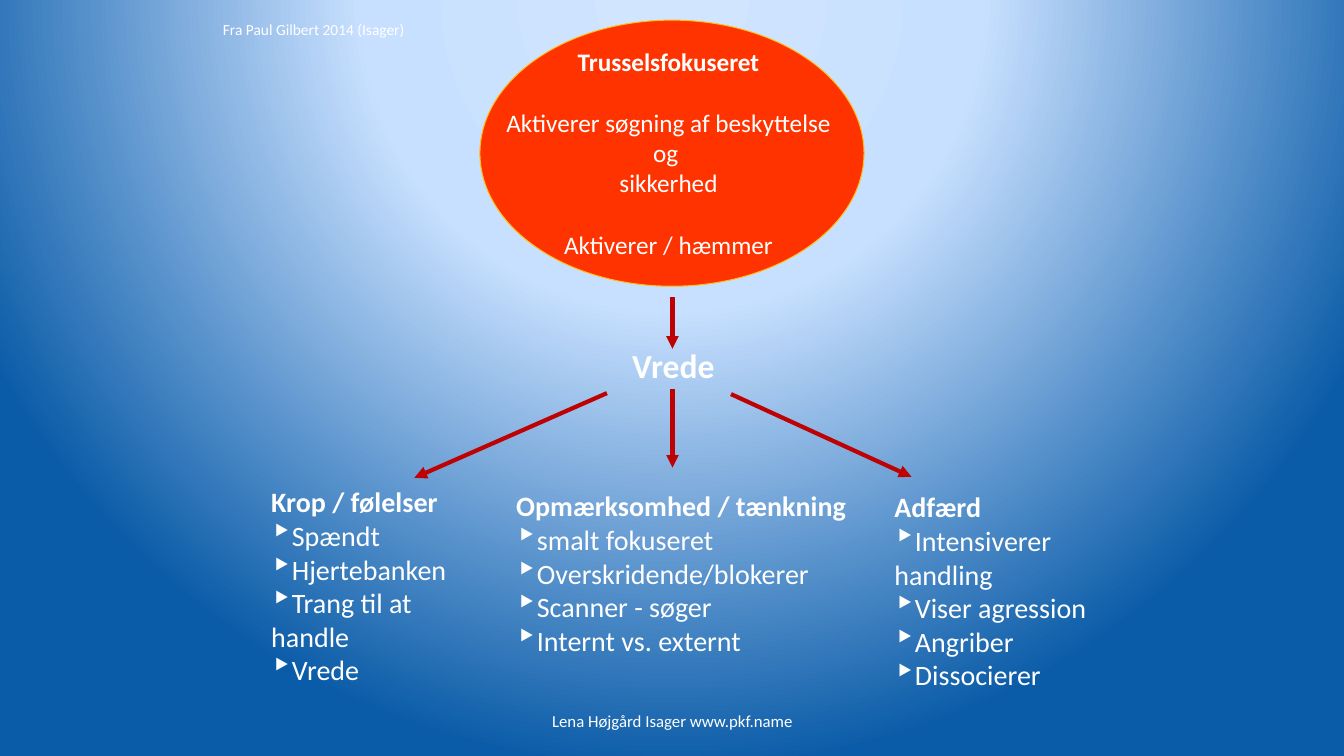
import pptx
import pptx.dml.color
import pptx.enum.shapes
import pptx.enum.text
import pptx.oxml
import pptx.oxml.ns
import pptx.util
from lxml import etree

RGBColor = pptx.dml.color.RGBColor
Align = pptx.enum.text.PP_ALIGN
Anchor = pptx.enum.text.MSO_ANCHOR
qn = pptx.oxml.ns.qn

WHITE = RGBColor(0xFF, 0xFF, 0xFF)
ORANGE_RED = RGBColor(0xFF, 0x33, 0x00)
GOLD = RGBColor(0xFB, 0xC0, 0x1E)
DARK_RED = RGBColor(0xBE, 0x02, 0x04)
BACKGROUND_STOPS = [
    (0, RGBColor(0xD1, 0xE5, 0xFF)),
    (40, RGBColor(0xC8, 0xE0, 0xFF)),
    (100, RGBColor(0x0B, 0x5C, 0xA8)),
]

PX = 9144  # EMU per px, 100 px to the inch
SLIDE_SIZE = (1333, 750)
FONT = "Calibri"
LABEL_INSETS = (0, 0, 4, 0)
THREAT_INSETS = (4, 4, 13, 4)
FOOTER_INSETS = (10, 5, 10, 5)

OVAL = (476, 20, 381, 264)
THREAT_BOX = (494, 48, 345, 207)
# text, bold, space before in points
THREAT_LINES = [
    ("Trusselsfokuseret", True, 0),
    ("Aktiverer søgning af beskyttelse og ", False, 22),
    ("sikkerhed", False, 0),
    ("Aktiverer / hæmmer", False, 22),
]
ARROWS = [
    ((725, 391), (904, 473)),
    ((667, 386), (667, 464)),
    ((602, 390), (411, 474)),
    ((667, 295), (667, 346)),
]
# place, size in points, bold, text
LABELS = [
    ((623, 342, 91, 40), 24, True, "Vrede"),
    ((217, 20, 191, 19), 11, False, "Fra Paul Gilbert 2014 (Isager)"),
]
# place, wraps, heading, items
COLUMNS = [
    ((508, 485, 338, 168), False, "Opmærksomhed / tænkning",
     ["smalt fokuseret", "Overskridende/blokerer", "Scanner - søger",
      "Internt vs. externt"]),
    ((265, 481, 210, 130), True, "Krop / følelser",
     ["Spændt", "Hjertebanken", "Trang til at handle", "Vrede"]),
    ((883, 486, 263, 168), False, "Adfærd",
     ["Intensiverer handling", "Viser agression", "Angriber",
      "Dissocierer"]),
]
FOOTER_BOX = (456, 695, 422, 40)
FOOTER = "Lena Højgård Isager www.pkf.name"


def emu(lengths):
    return [length * PX for length in lengths]


def paint_background(slide):
    slide.background.fill.solid()
    stops = "".join(
        f'<a:gs pos="{percent * 1000}"><a:srgbClr val="{color}"/></a:gs>'
        for percent, color in BACKGROUND_STOPS)
    gradient = pptx.oxml.parse_xml(
        f'<a:gradFill {pptx.oxml.ns.nsdecls("a")} rotWithShape="1">'
        f'<a:gsLst>{stops}</a:gsLst><a:path path="circle">'
        '<a:fillToRect l="50000" t="-80000" r="50000" b="180000"/>'
        '</a:path></a:gradFill>')
    solid = next(slide.element.iter(qn("a:solidFill")))
    solid.getparent().replace(solid, gradient)


def add_text_box(shapes, place, insets, wrap, anchor=Anchor.TOP):
    frame = shapes.add_textbox(*emu(place)).text_frame
    frame.word_wrap = wrap
    frame.vertical_anchor = anchor
    (frame.margin_left, frame.margin_top,
     frame.margin_right, frame.margin_bottom) = emu(insets)
    return frame


def add_line(frame, text, size, bold=False, align=Align.LEFT,
             indent=0, bullet=False):
    """Fill the frame's empty first paragraph, or append a new one."""
    first = frame.paragraphs[0]
    para = frame.add_paragraph() if first.runs else first
    para.alignment = align
    properties = para._p.get_or_add_pPr()
    properties.set("marL", str(indent * PX))
    properties.set("indent", "0")
    if bullet:
        etree.SubElement(properties, qn("a:buSzPct")).set("val", "125000")
        etree.SubElement(properties, qn("a:buChar")).set("char", "‣")
    span = para.add_run()
    span.text = text
    span.font.name = FONT
    span.font.size = pptx.util.Pt(size)
    span.font.bold = bold
    span.font.color.rgb = WHITE
    return para


def add_threat_oval(slide):
    group = slide.shapes.add_group_shape()
    oval = group.shapes.add_shape(
        pptx.enum.shapes.MSO_SHAPE.OVAL, *emu(OVAL))
    oval.shadow.inherit = False
    oval.fill.solid()
    oval.fill.fore_color.rgb = ORANGE_RED
    oval.line.color.rgb = GOLD
    oval.line.width = pptx.util.Pt(0.75)
    frame = add_text_box(group.shapes, THREAT_BOX, THREAT_INSETS, True,
                         Anchor.MIDDLE)
    for text, bold, space in THREAT_LINES:
        para = add_line(frame, text, 18, bold, Align.CENTER, indent=2)
        if space:
            para.space_before = pptx.util.Pt(space)


def add_arrow(slide, start, end):
    arrow = slide.shapes.add_connector(
        pptx.enum.shapes.MSO_CONNECTOR.STRAIGHT, *emu(start + end))
    arrow.line.color.rgb = DARK_RED
    arrow.line.width = pptx.util.Pt(3)
    etree.SubElement(arrow.line._get_or_add_ln(),
                     qn("a:tailEnd")).set("type", "triangle")
    etree.SubElement(arrow._element.spPr, qn("a:effectLst"))


def main():
    deck = pptx.Presentation()
    deck.slide_width, deck.slide_height = emu(SLIDE_SIZE)
    slide = deck.slides.add_slide(deck.slide_layouts[6])
    paint_background(slide)
    add_threat_oval(slide)
    for start, end in ARROWS:
        add_arrow(slide, start, end)
    for place, size, bold, text in LABELS:
        frame = add_text_box(slide.shapes, place, LABEL_INSETS, False)
        add_line(frame, text, size, bold, indent=4)
    for place, wrap, heading, items in COLUMNS:
        frame = add_text_box(slide.shapes, place, LABEL_INSETS, wrap)
        add_line(frame, heading, 20, True, indent=4)
        for item in items:
            add_line(frame, item, 20, indent=4, bullet=True)
    footer = add_text_box(slide.shapes, FOOTER_BOX, FOOTER_INSETS, True,
                          Anchor.MIDDLE)
    add_line(footer, FOOTER, 12, align=Align.CENTER)
    deck.save("out.pptx")


if __name__ == "__main__":
    main()
